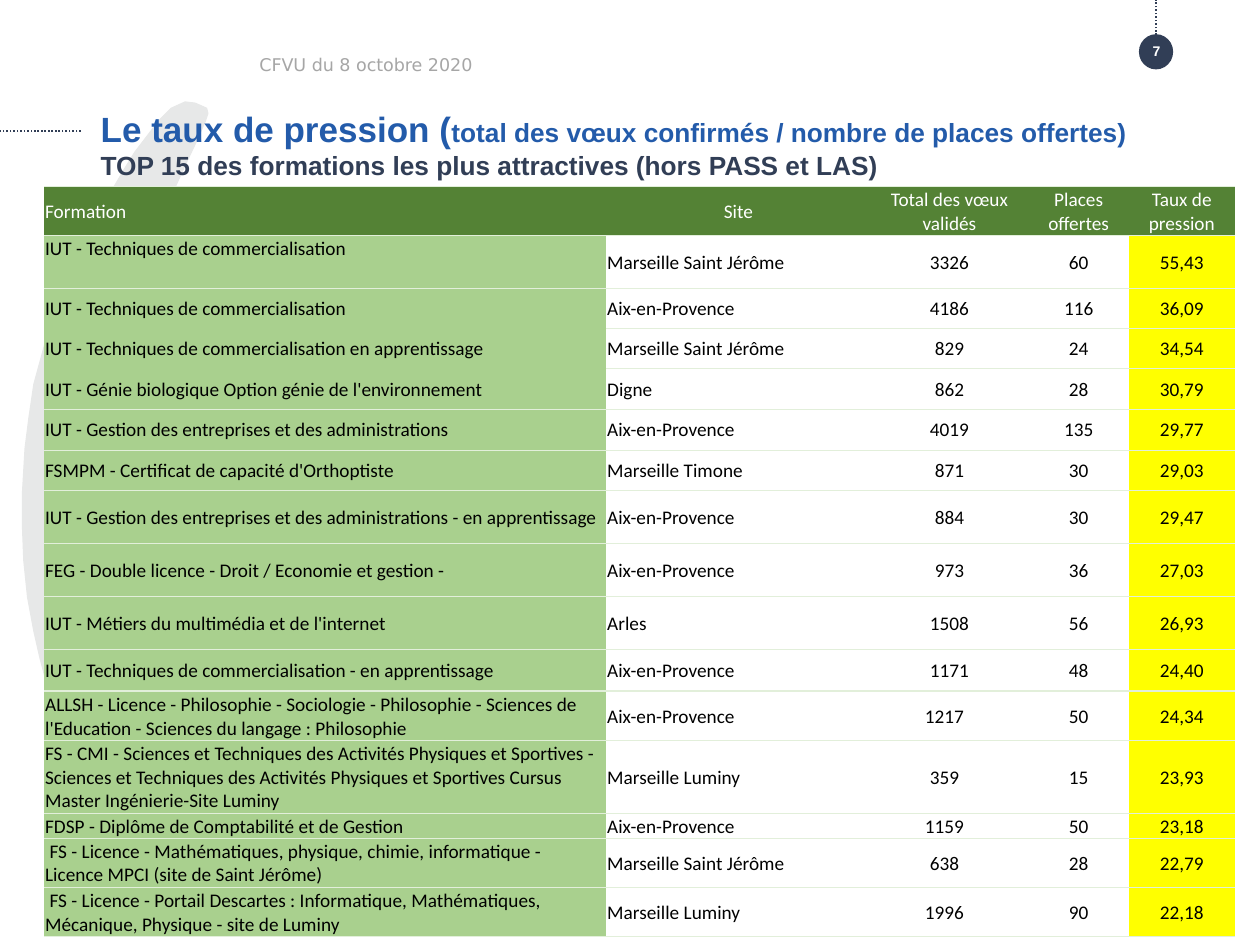
from lxml import etree
from pptx import Presentation
from pptx import util as u
from pptx.dml.color import RGBColor
from pptx.enum import dml, shapes, text
from pptx.oxml import ns


def colour(hex_string):
    return RGBColor.from_string(hex_string)


def add_run(paragraph, wording, size, font, hex_string, bold=False):
    run = paragraph.add_run()
    run.text = wording
    run.font.size = u.Pt(size)
    run.font.name = font
    run.font.bold = bold
    run.font.color.rgb = colour(hex_string)


NAVY, BLUE, GREY = "313E56", "235BAA", "E7E8E8"
HEADER_GREEN, ROW_GREEN, RULE_GREEN = "548235", "A9D08E", "E2EFDA"
NO_STYLE = "{2D5ABB26-0587-4C30-8999-92F81FD0307C}"

deck = Presentation()
deck.slide_width, deck.slide_height = u.Cm(25.4), u.Cm(19.05)
slide = deck.slides.add_slide(deck.slide_layouts[5])

upper_arc = [
    (165, 90), (164, 86), (155, 82), (147, 81), (136, 86), (127, 95), (120, 104),
    (107, 121), (99, 134), (85, 158), (69, 188), (57, 214), (46, 240), (39, 261),
    (33, 283), (27, 305), (23, 332), (20, 356), (18, 390), (18, 420), (19, 445),
    (22, 474), (27, 501), (32, 523), (39, 549), (48, 574), (57, 595), (69, 620),
    (83, 648), (83, 393), (85, 363), (87, 334), (91, 311), (97, 278), (103, 252),
    (111, 225), (119, 201), (128, 175), (137, 153), (147, 131), (157, 110), (163, 96),
]
lower_arc = [
    (165, 719), (162, 710), (154, 693), (141, 665), (132, 641), (120, 610), (113, 589),
    (106, 566), (96, 525), (90, 492), (87, 470), (84, 435), (83, 417), (83, 648),
    (93, 665), (104, 682), (117, 701), (127, 714), (136, 723), (143, 727), (151, 728),
    (155, 728), (162, 725), (165, 721),
]
for points in (upper_arc, lower_arc):
    outline = slide.shapes.build_freeform(*points[0], scale=u.Cm(0.0254))
    outline.add_line_segments(points[1:], close=True)
    arc = outline.convert_to_shape()
    arc.shadow.inherit = False
    arc.fill.solid()
    arc.fill.fore_color.rgb = colour(GREY)
    arc.line.color.rgb = colour(GREY)
    arc.line.width = u.Pt(0.75)

page_disc = slide.shapes.add_shape(
    shapes.MSO_SHAPE.OVAL, u.Cm(22.96), u.Cm(0.69), u.Cm(0.69), u.Cm(0.71))
page_disc.shadow.inherit = False
page_disc.fill.solid()
page_disc.fill.fore_color.rgb = colour(NAVY)
page_disc.line.fill.background()

for x1, y1, x2, y2 in ((23.31, 0.71, 23.31, 0), (1.63, 2.64, 0, 2.64)):
    dotted = slide.shapes.add_connector(
        shapes.MSO_CONNECTOR.STRAIGHT, u.Cm(x1), u.Cm(y1), u.Cm(x2), u.Cm(y2))
    dotted.line.color.rgb = colour(NAVY)
    dotted.line.width = u.Pt(1)
    dotted.line.dash_style = dml.MSO_LINE.ROUND_DOT
    etree.SubElement(dotted.element.spPr, ns.qn("a:effectLst"))

title = slide.shapes.title
title.element.getparent().append(title.element)
title.left, title.top, title.width, title.height = u.Cm(2.03), u.Cm(2.16), u.Cm(22.86), u.Cm(1.19)
heading = title.text_frame
heading.margin_left = heading.margin_right = heading.margin_top = heading.margin_bottom = 0
heading.vertical_anchor = text.MSO_ANCHOR.TOP
heading.auto_size = text.MSO_AUTO_SIZE.NONE
heading_line = heading.paragraphs[0]
heading_line.alignment = text.PP_ALIGN.LEFT
add_run(heading_line, "Le taux de pression (", 20, "Arial", BLUE, True)
add_run(heading_line, "total des vœux confirmés / nombre de places offertes)", 15, "Arial", BLUE, True)
heading_line.add_line_break()
add_run(heading_line, "TOP 15 des formations les plus attractives (hors PASS et LAS)", 15, "Arial", NAVY, True)

labels = [
    ("7", 22.68, 0.84, 1.27, 0.38, 8, "Arial", "FFFFFF", True, text.PP_ALIGN.CENTER),
    ("CFVU du 8 octobre 2020", 4.98, 0.74, 16.81, 1.12, 10, "DejaVu Sans", "A6A6A6", False, text.PP_ALIGN.LEFT),
]
for wording, x, y, width, height, size, font, ink, bold, alignment in labels:
    label = slide.shapes.add_textbox(u.Cm(x), u.Cm(y), u.Cm(width), u.Cm(height)).text_frame
    label.word_wrap = True
    label.vertical_anchor = text.MSO_ANCHOR.MIDDLE
    label.paragraphs[0].alignment = alignment
    add_run(label.paragraphs[0], wording, size, font, ink, bold)

header = ("Formation", "Site", "Total des vœux validés", "Places offertes", "Taux de pression")
top_ten = [
    header,
    ("IUT - Techniques de commercialisation", "Marseille Saint Jérôme", "3326", "60", "55,43"),
    ("IUT - Techniques de commercialisation", "Aix-en-Provence", "4186", "116", "36,09"),
    ("IUT - Techniques de commercialisation en apprentissage", "Marseille Saint Jérôme", "829", "24", "34,54"),
    ("IUT - Génie biologique Option génie de l'environnement", "Digne", "862", "28", "30,79"),
    ("IUT - Gestion des entreprises et des administrations", "Aix-en-Provence", "4019", "135", "29,77"),
    ("FSMPM - Certificat de capacité d'Orthoptiste", "Marseille Timone", "871", "30", "29,03"),
    ("IUT - Gestion des entreprises et des administrations - en apprentissage",
     "Aix-en-Provence", "884", "30", "29,47"),
    ("FEG - Double licence - Droit / Economie et gestion -", "Aix-en-Provence", "973", "36", "27,03"),
    ("IUT - Métiers du multimédia et de l'internet", "Arles", "1508", "56", "26,93"),
    ("IUT - Techniques de commercialisation - en apprentissage", "Aix-en-Provence", "1171", "48", "24,40"),
]
last_five = [
    ("ALLSH - Licence - Philosophie - Sociologie - Philosophie - Sciences de l'Education"
     " - Sciences du langage : Philosophie", "Aix-en-Provence", "1217", "50", "24,34"),
    ("FS - CMI - Sciences et Techniques des Activités Physiques et Sportives - Sciences et Techniques"
     " des Activités Physiques et Sportives Cursus Master Ingénierie-Site Luminy",
     "Marseille Luminy", "359", "15", "23,93"),
    ("FDSP - Diplôme de Comptabilité et de Gestion", "Aix-en-Provence", "1159", "50", "23,18"),
    ("FS - Licence - Mathématiques, physique, chimie, informatique - Licence MPCI (site de Saint Jérôme)",
     "Marseille Saint Jérôme", "638", "28", "22,79"),
    ("FS - Licence - Portail Descartes : Informatique, Mathématiques, Mécanique, Physique - site de Luminy",
     "Marseille Luminy", "1996", "90", "22,18"),
]
rankings = [
    (top_ten, 3.76, (11.33, 5.33, 3.18, 2.03, 2.13),
     (0.99, 1.07, 0.79, 0.82, 0.82, 0.82, 0.82, 1.07, 1.07, 1.07, 0.82)),
    (last_five, 13.94, (11.33, 5.13, 3.38, 2.03, 2.13), (0.99, 1.47, 0.5, 0.99, 0.99)),
]
for ranking, top, widths, heights in rankings:
    frame = slide.shapes.add_table(
        len(ranking), len(widths), u.Cm(0.89), u.Cm(top), u.Cm(sum(widths)), u.Cm(sum(heights)))
    frame.element.find(".//" + ns.qn("a:tableStyleId")).text = NO_STYLE
    grid = frame.table
    grid.first_row = ranking[0] is header
    grid.horz_banding = False
    for column, width in zip(grid.columns, widths):
        column.width = u.Cm(width)
    for r, (entry, height) in enumerate(zip(ranking, heights)):
        grid.rows[r].height = u.Cm(height)
        is_header = entry is header
        for c, wording in enumerate(entry):
            cell = grid.cell(r, c)
            cell.margin_left = cell.margin_right = cell.margin_top = u.Cm(0.02)
            cell.margin_bottom = 0
            cell.vertical_anchor = text.MSO_ANCHOR.MIDDLE
            line = cell.text_frame.paragraphs[0]
            centred = c > 1 or (is_header and c == 1)
            line.alignment = text.PP_ALIGN.CENTER if centred else text.PP_ALIGN.LEFT
            add_run(line, wording, 11, "Calibri", "FFFFFF" if is_header else "000000")
            if wording.startswith("FS - Licence"):
                line._p.get_or_add_pPr().set("indent", str(u.Cm(0.09)))
                cell.margin_right = u.Cm(0.2)

            merged_look = ranking is top_ten and c == 0 and r in (2, 3)
            for side in ("a:lnT", "a:lnB") if r == 0 else ("a:lnB",):
                border = etree.SubElement(cell._tc.get_or_add_tcPr(), ns.qn(side), w=str(u.Pt(0.5)))
                paint = etree.SubElement(border, ns.qn("a:solidFill"))
                etree.SubElement(paint, ns.qn("a:srgbClr"), val=ROW_GREEN if merged_look else RULE_GREEN)
            shade = HEADER_GREEN if is_header else {0: ROW_GREEN, 4: "FFFF00"}.get(c)
            if shade:
                cell.fill.solid()
                cell.fill.fore_color.rgb = colour(shade)
            else:
                cell.fill.background()
    if ranking is top_ten:
        grid.cell(1, 0).vertical_anchor = text.MSO_ANCHOR.TOP

deck.save("out.pptx")
